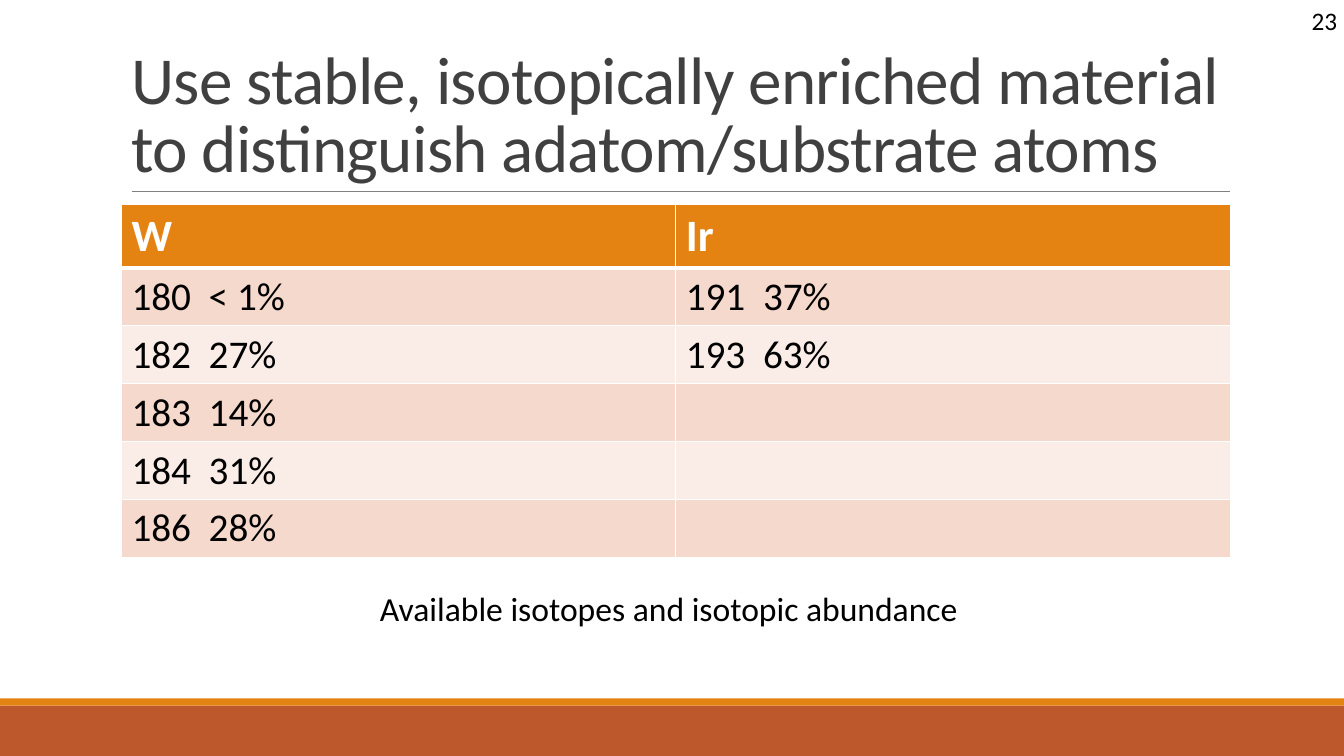
from lxml import etree
from pptx import Presentation
from pptx.dml.color import RGBColor
from pptx.enum.shapes import MSO_CONNECTOR, MSO_SHAPE
from pptx.enum.text import MSO_ANCHOR, PP_ALIGN
from pptx.oxml.ns import qn
from pptx.util import Cm, Pt

TITLE = "Use stable, isotopically enriched material to distinguish adatom/substrate atoms"
CAPTION = "Available isotopes and isotopic abundance"
PAGE_NUMBER = "23"
ISOTOPES = [
    ("W", "Ir"),
    ("180  < 1%", "191  37%"),
    ("182  27%", "193  63%"),
    ("183  14%", ""),
    ("184  31%", ""),
    ("186  28%", ""),
]

FONT = "Calibri"
WHITE = RGBColor(0xFF, 0xFF, 0xFF)
BLACK = RGBColor(0, 0, 0)
DARK_GRAY = RGBColor(0x40, 0x40, 0x40)
RULE_GRAY = RGBColor(0x80, 0x80, 0x80)
ORANGE = RGBColor(0xE4, 0x83, 0x12)
RUST = RGBColor(0xBD, 0x58, 0x2C)
BANDS = (RGBColor(0xFA, 0xED, 0xE7), RGBColor(0xF5, 0xD9, 0xCC))

RECTANGLE = MSO_SHAPE.RECTANGLE
STRAIGHT = MSO_CONNECTOR.STRAIGHT
TOP, BOTTOM = MSO_ANCHOR.TOP, MSO_ANCHOR.BOTTOM
LEFT, CENTER = PP_ALIGN.LEFT, PP_ALIGN.CENTER

SLIDE_WIDTH, SLIDE_HEIGHT = Cm(33.87), Cm(19.05)
BAR_HEIGHT, STRIPE_HEIGHT = Cm(1.27), Cm(0.18)
CONTENT_LEFT, CONTENT_WIDTH = Cm(3.06), Cm(27.94)
HEADER_HEIGHT, ROW_HEIGHT = Cm(1.61), Cm(1.46)


def style_paragraph(paragraph, size, color, bold=False):
    font = paragraph.font
    font.name, font.size, font.bold = FONT, Pt(size), bold
    font.color.rgb = color


def add_bar(slide, top, height, color):
    bar = slide.shapes.add_shape(RECTANGLE, 0, top, SLIDE_WIDTH, height)
    bar.shadow.inherit = False
    bar.fill.solid()
    bar.fill.fore_color.rgb = color
    bar.line.fill.background()


def add_text(slide, text, box, size, color, align=CENTER, anchor=TOP):
    frame = slide.shapes.add_textbox(*box).text_frame
    frame.word_wrap = True
    frame.vertical_anchor = anchor
    paragraph = frame.paragraphs[0]
    paragraph.text = text
    paragraph.alignment = align
    style_paragraph(paragraph, size, color)
    return paragraph


def add_borders(cell, bottom_width):
    properties = cell._tc.get_or_add_tcPr()
    widths = {"a:lnL": 1, "a:lnR": 1, "a:lnT": 1, "a:lnB": bottom_width}
    for position, (tag, width) in enumerate(widths.items()):
        border = etree.Element(qn(tag), w=str(Pt(width)))
        fill = etree.SubElement(border, qn("a:solidFill"))
        etree.SubElement(fill, qn("a:srgbClr"), val=str(WHITE))
        properties.insert(position, border)


def add_isotope_table(slide):
    height = HEADER_HEIGHT + ROW_HEIGHT * (len(ISOTOPES) - 1)
    table = slide.shapes.add_table(
        len(ISOTOPES), 2, CONTENT_LEFT, Cm(5.14), CONTENT_WIDTH, height
    ).table
    for row, values in enumerate(ISOTOPES):
        header = row == 0
        table.rows[row].height = HEADER_HEIGHT if header else ROW_HEIGHT
        for column, value in enumerate(values):
            cell = table.cell(row, column)
            cell.text = value
            cell.fill.solid()
            cell.fill.fore_color.rgb = ORANGE if header else BANDS[row % 2]
            style_paragraph(
                cell.text_frame.paragraphs[0],
                32 if header else 28,
                WHITE if header else BLACK,
                header,
            )
            previous_is_header = row == 1
            add_borders(cell, 3 if header else 1)
            if previous_is_header:
                cell._tc.tcPr.find(qn("a:lnT")).set("w", str(Pt(3)))


def main():
    presentation = Presentation()
    presentation.slide_width, presentation.slide_height = SLIDE_WIDTH, SLIDE_HEIGHT
    slide = presentation.slides.add_slide(presentation.slide_layouts[6])

    bar_top = SLIDE_HEIGHT - BAR_HEIGHT
    add_bar(slide, bar_top, BAR_HEIGHT, RUST)
    add_bar(slide, bar_top - STRIPE_HEIGHT, STRIPE_HEIGHT, ORANGE)

    rule = slide.shapes.add_connector(STRAIGHT, Cm(3.32), Cm(4.82), Cm(31), Cm(4.82))
    rule.line.color.rgb = RULE_GRAY
    rule.line.width = Pt(0.5)
    etree.SubElement(rule._element.spPr, qn("a:effectLst"))

    title_box = (CONTENT_LEFT, Cm(0.78), CONTENT_WIDTH, Cm(4.04))
    title = add_text(slide, TITLE, title_box, 48, DARK_GRAY, LEFT, BOTTOM)
    title.line_spacing = 0.85
    title.runs[0].font._element.set("spc", "-50")

    add_isotope_table(slide)
    add_text(slide, CAPTION, (Cm(6.48), Cm(14.7), Cm(20.75), Cm(2.31)), 24, BLACK)
    add_text(slide, PAGE_NUMBER, (Cm(29.57), 0, Cm(7.62), Cm(1.02)), 18, BLACK)

    presentation.save("out.pptx")


if __name__ == "__main__":
    main()
